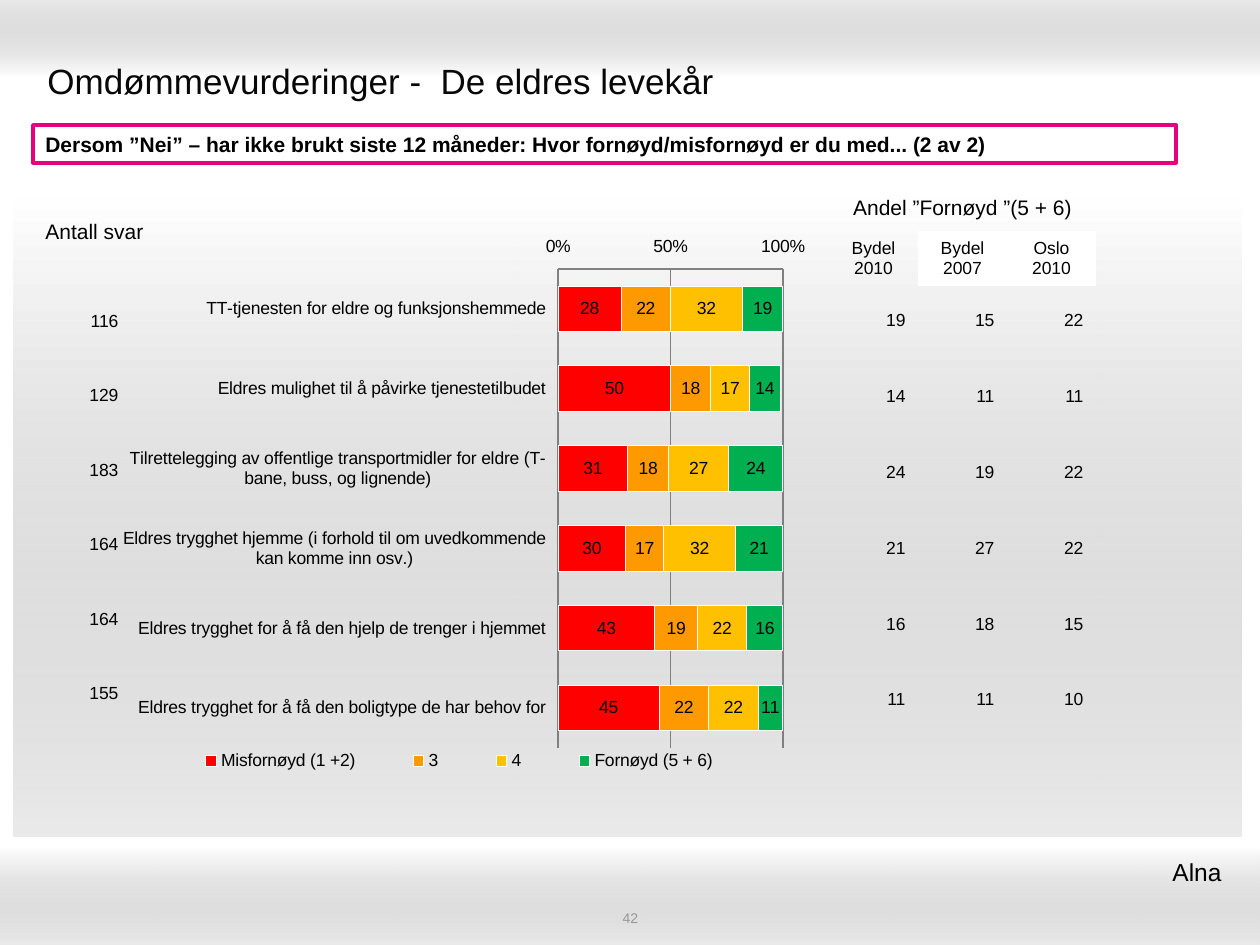
from pptx import Presentation
from pptx.chart.data import CategoryChartData as ChartData
from pptx.dml.color import RGBColor as RGB
from pptx.enum.chart import XL_CHART_TYPE as Kind, XL_LEGEND_POSITION as Place
from pptx.enum.chart import XL_TICK_LABEL_POSITION as Label, XL_TICK_MARK as Tick
from pptx.enum.shapes import MSO_SHAPE as Shape
from pptx.enum.text import MSO_ANCHOR as Anchor, PP_ALIGN as Align
from pptx.oxml import parse_xml
from pptx.oxml.ns import nsdecls
from pptx.util import Emu, Pt

BLACK, WHITE = RGB(0, 0, 0), RGB(255, 255, 255)
INK, GRAY, GRID = RGB(8, 8, 8), RGB(150, 150, 150), RGB(128, 128, 128)
PINK = RGB(231, 0, 126)
RED, ORANGE = RGB(255, 0, 0), RGB(255, 153, 0)
YELLOW, GREEN = RGB(255, 192, 0), RGB(0, 176, 80)
NO_STYLE = "{2D5ABB26-0587-4C30-8999-92F81FD0307C}"

# box in px, gradient angle in degrees
BANDS = [((0, 0, 1260, 78), 270), ((0, 847, 1260, 98), 90), ((14, 197, 1227, 640), 90)]

# text, box in px, font, alignment
TEXTS = [
    ("Omdømmevurderinger -  De eldres levekår", (35, 46, 1191, 69),
     dict(size=Pt(20), color=INK), Align.LEFT),
    ("42", (431, 909, 399, 17), dict(size=Pt(8), color=GRAY), Align.CENTER),
    ("Alna", (768, 850, 466, 43), dict(size=Pt(14)), Align.RIGHT),
]
QUESTION = "Dersom ”Nei” – har ikke brukt siste 12 måneder: Hvor fornøyd/misfornøyd er du med... (2 av 2)"

CATS = [
    "TT-tjenesten for eldre og funksjonshemmede",
    "Eldres mulighet til å påvirke tjenestetilbudet",
    "Tilrettelegging av offentlige transportmidler for eldre (T-bane, buss, og lignende)",
    "Eldres trygghet hjemme (i forhold til om uvedkommende kan komme inn osv.)",
    "Eldres trygghet for å få den hjelp de trenger i hjemmet",
    "Eldres trygghet for å få den boligtype de har behov for",
]
SERIES = [
    ("Misfornøyd (1 +2)", (28, 50, 31, 30, 43, 45), RED),
    ("3", (22, 18, 18, 17, 19, 22), ORANGE),
    ("4", (32, 17, 27, 32, 22, 22), YELLOW),
    ("Fornøyd (5 + 6)", (19, 14, 24, 21, 16, 11), GREEN),
]
COUNTS = [[116], [129], [183], [164], [164], [155]]
SHARES = [(19, 15, 22), (14, 11, 11), (24, 19, 22), (21, 27, 22), (16, 18, 15), (11, 11, 10)]
HEADS = [("Andel ”Fornøyd ”(5 + 6)", "", ""), ("Bydel\n2010", "Bydel\n2007", "Oslo\n2010")]

CHART = (123, 226, 694, 572)
PLOT = (558, 269, 225, 479)
LEGEND = (153, 747, 612, 28)


def px(*vals):
    return [Emu(round(v * 914400 / 126)) for v in vals]


def style(font, size=Pt(10), color=BLACK, bold=False):
    for key, val in dict(name="Arial", size=size, bold=bold).items():
        setattr(font, key, val)
    font.color.rgb = color


def write(frame, text, look, align):
    frame.text = text
    for par in frame.paragraphs:
        par.alignment = align
        style(par.font, **look)


def add_band(shapes, box, angle):
    """Draw a band that fades from white to clear gray."""
    band = shapes.add_shape(Shape.RECTANGLE, *px(*box))
    band.shadow.inherit = False
    band.line.fill.background()
    fade = parse_xml(
        f'<a:gradFill {nsdecls("a")} rotWithShape="1"><a:gsLst>'
        '<a:gs pos="0"><a:srgbClr val="FFFFFF"/></a:gs>'
        '<a:gs pos="100000"><a:srgbClr val="999999"><a:alpha val="20000"/></a:srgbClr></a:gs>'
        f'</a:gsLst><a:lin ang="{angle * 60000}" scaled="1"/></a:gradFill>')
    band.element.spPr.find("{*}prstGeom").addnext(fade)


def add_table(shapes, rows, spot, width, heights, align, size=Pt(10)):
    cols = len(rows[0])
    box = px(*spot, width * cols, sum(heights))
    frame = shapes.add_table(len(rows), cols, *box)
    frame.element.xpath(".//a:tableStyleId")[0].text = NO_STYLE
    table = frame.table
    table.first_row = table.horz_banding = False
    for col in table.columns:
        col.width = px(width)[0]
    for r, row in enumerate(rows):
        table.rows[r].height = px(heights[r])[0]
        for c, val in enumerate(row):
            cell = table.cell(r, c)
            cell.fill.background()
            cell.vertical_anchor = Anchor.MIDDLE
            write(cell.text_frame, str(val), dict(size=size), align)
    return table


def lay_out(parent, spot, box, inner=False):
    """Fix a chart part at a px box, given as shares of the chart."""
    left, top, wide, high = CHART
    x, y, w, h = box
    parts = dict(x=(x - left) / wide, y=(y - top) / high, w=w / wide, h=h / high)
    target = '<c:layoutTarget val="inner"/>' if inner else ""
    modes = "".join(f'<c:{k}Mode val="edge"/>' for k in "xy")
    sizes = "".join(f'<c:{k} val="{v:.4f}"/>' for k, v in parts.items())
    for old in parent.findall("{*}layout"):
        parent.remove(old)
    parent.insert(spot, parse_xml(
        f'<c:layout {nsdecls("c")}><c:manualLayout>{target}{modes}{sizes}'
        '</c:manualLayout></c:layout>'))


def add_chart(shapes):
    data = ChartData()
    data.categories = CATS
    for name, vals, _ in SERIES:
        data.add_series(name, vals)
    chart = shapes.add_chart(Kind.BAR_STACKED, *px(*CHART), data).chart
    chart.has_title = False
    style(chart.font)
    plot = chart.plots[0]
    plot.gap_width, plot.overlap, plot.vary_by_categories = 75, 100, False
    for ser, (_, _, color) in zip(plot.series, SERIES):
        ser.format.fill.solid()
        ser.format.fill.fore_color.rgb = color
        ser.format.line.color.rgb = WHITE
        labels = ser.data_labels
        labels.show_value = True
        labels.number_format, labels.number_format_is_linked = "0", False
        style(labels.font)

    cat, val = chart.category_axis, chart.value_axis
    cat.reverse_order = True
    cat.major_tick_mark = Tick.NONE
    val.major_tick_mark = Tick.INSIDE
    val.minimum_scale, val.maximum_scale, val.major_unit = 0, 100, 50
    val.has_major_gridlines = True
    val.tick_labels.number_format = "General\\%"
    val.tick_labels.number_format_is_linked = False
    for axis in (cat, val):
        axis.tick_label_position = Label.LOW
        axis.minor_tick_mark = Tick.NONE
        style(axis.tick_labels.font)
    # Level labels may wrap
    for body in chart.element.xpath(".//c:catAx/c:txPr/a:bodyPr"):
        body.set("rot", "0")
        body.set("vert", "horz")
    for part in (cat, val, val.major_gridlines):
        part.format.line.color.rgb = GRID

    chart.has_legend = True
    chart.legend.position = Place.BOTTOM
    chart.legend.include_in_layout = False
    style(chart.legend.font)
    lay_out(chart.element.xpath(".//c:plotArea")[0], 0, PLOT, inner=True)
    lay_out(chart.element.xpath(".//c:legend")[0], 1, LEGEND)


def main():
    deck = Presentation()
    deck.slide_width, deck.slide_height = px(1260, 945)
    shapes = deck.slides.add_slide(deck.slide_layouts[6]).shapes
    for box, angle in BANDS:
        add_band(shapes, box, angle)
    for text, box, look, align in TEXTS:
        frame = shapes.add_textbox(*px(*box)).text_frame
        frame.word_wrap = True
        frame.vertical_anchor = Anchor.MIDDLE
        write(frame, text, look, align)

    ask = shapes.add_shape(Shape.RECTANGLE, *px(33, 125, 1143, 38))
    ask.shadow.inherit = False
    ask.fill.solid()
    ask.fill.fore_color.rgb = WHITE
    ask.line.color.rgb, ask.line.width = PINK, Pt(2)
    write(ask.text_frame, QUESTION, dict(size=Pt(12), bold=True), Align.LEFT)

    add_chart(shapes)
    add_table(shapes, SHARES, (829, 282), 89, [76] * 6, Align.RIGHT)
    heads = add_table(shapes, HEADS, (829, 185), 89, [46, 55], Align.CENTER)
    heads.cell(0, 0).merge(heads.cell(0, 2))
    style(heads.cell(0, 0).text_frame.paragraphs[0].font, Pt(12))
    for c in (1, 2):
        fill = heads.cell(1, c).fill
        fill.solid()
        fill.fore_color.rgb = WHITE
    add_table(shapes, COUNTS, (65, 284), 66, [75, 74] * 3, Align.RIGHT)
    add_table(shapes, [["Antall svar"]], (5, 195), 179, [75], Align.CENTER, Pt(12))
    deck.save("out.pptx")


if __name__ == "__main__":
    main()
